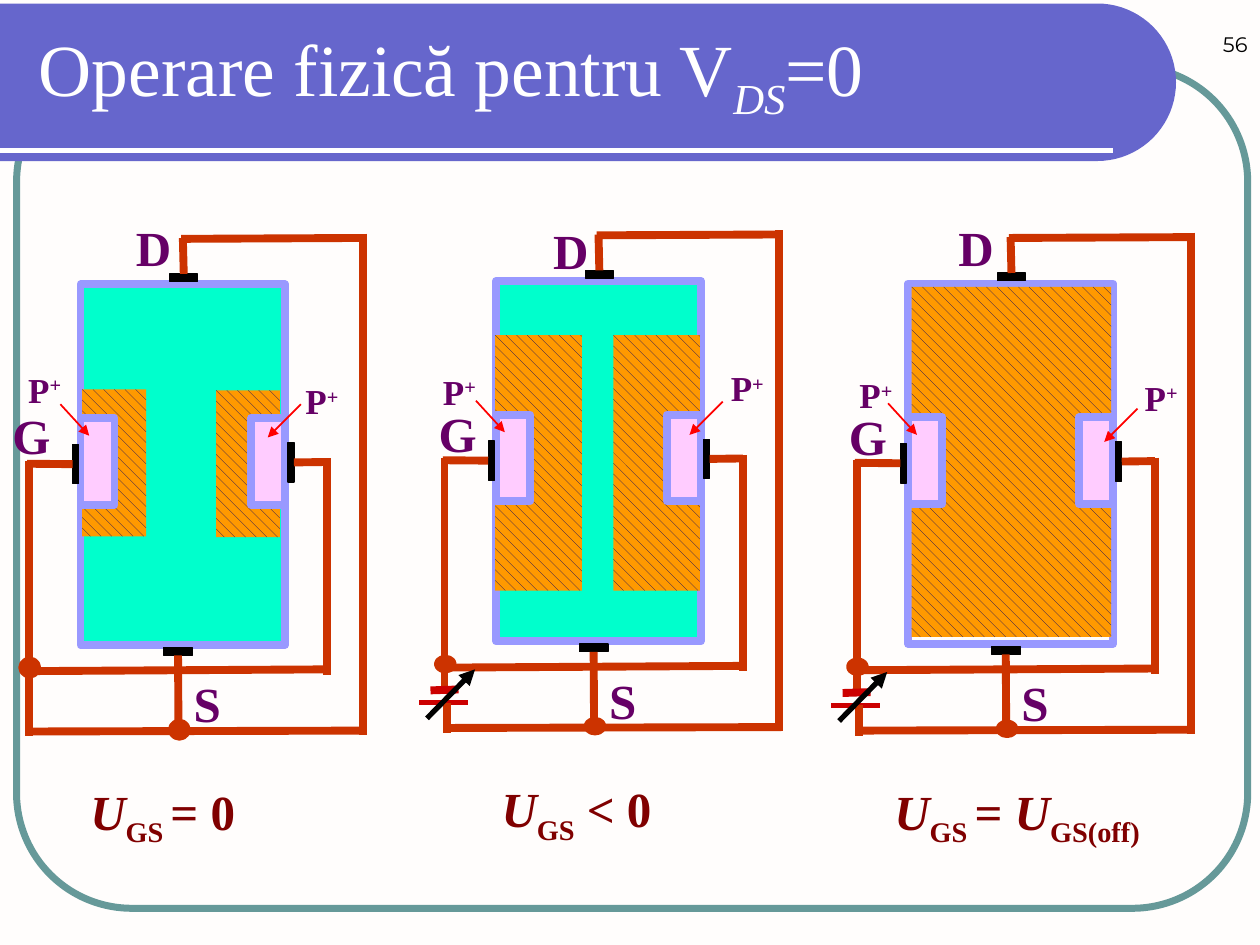
from dataclasses import dataclass
from math import cos, pi, sin

from lxml.etree import SubElement
from pptx import Presentation
from pptx.dml.color import RGBColor
from pptx.enum.dml import MSO_PATTERN
from pptx.enum.shapes import MSO_CONNECTOR, MSO_SHAPE
from pptx.enum.text import MSO_ANCHOR, PP_ALIGN
from pptx.oxml.ns import qn
from pptx.util import Pt

TOP, LEFT, BOTTOM, RIGHT = range(4)
SUB, SUPER = -25000, 30000


@dataclass(frozen=True)
class Theme:
    """Colours, fonts and type sizes of the slide."""
    paper: str = "FFFDFC"
    frame: str = "669999"
    band: str = "6666CC"
    white: str = "FFFFFF"
    black: str = "000000"
    caption: str = "800000"
    label: str = "660066"
    channel: str = "00FFCC"
    edge: str = "9999FF"
    gate: str = "FFCCFF"
    depletion: str = "FF9900"
    hatch: str = "000066"
    wire: str = "CC3300"
    battery: str = "CC0000"
    pointer: str = "FF0000"
    serif: str = "Times New Roman"
    sans: str = "Montserrat"
    title_size: int = 42
    label_size: int = 28
    small_size: int = 20
    number_size: int = 12


@dataclass(frozen=True)
class Transistor:
    """One bias state; positions are relative to the body's top left corner."""
    origin: tuple
    depletion: tuple
    drain_label: tuple
    gate_label: tuple
    left_p: tuple
    right_p: tuple
    pointer: tuple
    channel: str = None
    biased: bool = True
    dot_height: float = 6


THEME = Theme()

TRANSISTORS = (
    Transistor((46, 162.5), ((77.5, 60.5, 36.5, 84), (1, 60, 36.5, 84)),
               (24.5, -41.5), (-46, 65.5), (-37, 44.5), (121.5, 51),
               (126, 68.5), THEME.channel, False, 8),
    Transistor((283.5, 160.5), ((67, 31, 49.5, 146), (-0.5, 31, 49.5, 146)),
               (25.5, -38), (-40, 66.5), (-37.5, 47.5), (127, 45.5),
               (129.5, 69), THEME.channel),
    Transistor((519, 162), ((2, 2, 114, 200),),
               (21.5, -41), (-41, 67), (-35, 48), (128, 49.5),
               (131, 71.5)),
)

CAPTIONS = (
    (44.5, 443, 117.5, (("U", 0, True), ("GS ", SUB, False), ("= 0", 0, False))),
    (279.5, 441.5, 134.5, (("U", 0, True), ("GS", SUB, False), (" < 0", 0, False))),
    (504, 443, 180, (("U", 0, True), ("GS ", SUB, False), ("= ", 0, False),
                     ("U", 0, True), ("GS(off)", SUB, False))),
)


def rgb(color):
    """Turn a hex string into a colour."""
    return RGBColor.from_string(color)


def style(shape, fill=None, line=None, width=0.75):
    """Set fill and outline of a shape and remove its shadow."""
    shape.shadow.inherit = False
    if fill:
        shape.fill.solid()
        shape.fill.fore_color.rgb = rgb(fill)
    else:
        shape.fill.background()
    if line:
        shape.line.color.rgb = rgb(line)
        shape.line.width = Pt(width)
    else:
        shape.line.fill.background()
    return shape


def add_block(slide, box, fill=None, line=None, width=0.75, kind=MSO_SHAPE.RECTANGLE):
    """Add a preset shape at left, top, width, height."""
    shape = slide.shapes.add_shape(kind, *(Pt(length) for length in box))
    return style(shape, fill, line, width)


def add_line(slide, start, end, color=THEME.wire, width=4.5, arrow=False):
    """Add a straight line, with an arrowhead at its end if asked."""
    line = slide.shapes.add_connector(
        MSO_CONNECTOR.STRAIGHT, *(Pt(length) for length in (*start, *end)))
    line.line.color.rgb = rgb(color)
    line.line.width = Pt(width)
    if arrow:
        SubElement(line.line._get_or_add_ln(), qn("a:tailEnd"), type="triangle")
    SubElement(line._element.spPr, qn("a:effectLst"))
    return line


def write(frame, parts, size, color, font=THEME.serif, bold=False):
    """Fill a text frame with runs given as text, baseline shift and italic."""
    frame.word_wrap = True
    paragraph = frame.paragraphs[0]
    paragraph.alignment = PP_ALIGN.LEFT
    for text, baseline, italic in parts:
        run = paragraph.add_run()
        run.text = text
        run.font.name = font
        run.font.size = Pt(size)
        run.font.bold = bold
        run.font.italic = italic
        run.font.color.rgb = rgb(color)
        if baseline:
            run._r.get_or_add_rPr().set("baseline", str(baseline))
    return paragraph


def add_label(slide, box, parts, size=THEME.label_size, color=THEME.label):
    """Add a bold serif text box."""
    label = slide.shapes.add_textbox(*(Pt(length) for length in box))
    write(label.text_frame, parts, size, color, bold=True)


def add_backdrop(slide):
    """Draw the background, rounded frame and title band."""
    slide.background.fill.solid()
    slide.background.fill.fore_color.rgb = rgb(THEME.paper)
    frame = add_block(slide, (9.5, 38, 703.5, 481), None, THEME.frame, 4,
                      MSO_SHAPE.ROUNDED_RECTANGLE)
    frame.adjustments[0] = 0.137
    radius, center_x, center_y, steps = 45, 627, 47, 40
    angles = [pi * step / steps - pi / 2 for step in range(steps + 1)]
    arc = [(Pt(center_x + radius * cos(a)), Pt(center_y + radius * sin(a))) for a in angles]
    outline = slide.shapes.build_freeform(0, Pt(center_y - radius))
    outline.add_line_segments(arc + [(0, Pt(center_y + radius))], close=True)
    style(outline.convert_to_shape(), THEME.band)
    add_line(slide, (0, 86), (636, 86), THEME.white, 3)


def add_title(slide):
    """Place the title over the band and the number beside it."""
    title = slide.shapes.title
    title.left, title.top, title.width, title.height = Pt(15), Pt(8), Pt(631.5), Pt(67.5)
    title.text_frame.vertical_anchor = MSO_ANCHOR.MIDDLE
    write(title.text_frame,
          (("Operare fizică pentru V", 0, False), ("DS", SUB, True), ("=0", 0, False)),
          THEME.title_size, THEME.white)
    slide.shapes._spTree.append(title._element)
    number = slide.shapes.add_textbox(Pt(587), 0, Pt(133), Pt(36))
    number.text_frame.vertical_anchor = MSO_ANCHOR.BOTTOM
    paragraph = write(number.text_frame, (("56", 0, False),),
                      THEME.number_size, THEME.black, THEME.sans)
    paragraph.alignment = PP_ALIGN.RIGHT


def add_transistor(slide, device):
    """Draw a transistor with its regions, contacts, wiring and labels."""
    def at(x, y, *size):
        return (device.origin[0] + x, device.origin[1] + y, *size)

    add_block(slide, at(0, 0, 117, 206), device.channel, THEME.edge, 4.5)
    for region in device.depletion:
        hatched = add_block(slide, at(*region))
        hatched.fill.patterned()
        hatched.fill.pattern = MSO_PATTERN.DASHED_DOWNWARD_DIAGONAL
        hatched.fill.fore_color.rgb = rgb(THEME.hatch)
        hatched.fill.back_color.rgb = rgb(THEME.depletion)
    for gate_x in (0, 97.5):
        add_block(slide, at(gate_x, 76.5, 19.5, 49.5), THEME.gate, THEME.edge, 4.5)

    leads = (((51, -6, 16, 4.5), TOP, (58.5, -26.5)),
             ((47.5, 207.5, 16.5, 4.5), BOTTOM, (56, 255)),
             ((-4.5, 91.5, 3.5, 22.5), LEFT, (-30.5, 102.5)),
             ((118.5, 90.5, 3.5, 22.5), RIGHT, (141, 101.5)))
    for box, side, end in leads:
        contact = add_block(slide, at(*box), THEME.black, THEME.black)
        add_line(slide, at(*box[:2]), at(*end)).begin_connect(contact, side)

    gate_end = 233 if device.biased else 258
    wires = (((141, 99.5), (141, 223)), ((-29.5, 221), (143, 220)),
             ((-29.5, 101), (-29.5, gate_end)), ((-29.5, 255.5), (163, 255)),
             ((161.5, -29), (161.5, 257.5)), ((57.5, -26), (160.5, -26.5)))
    for start, end in wires:
        add_line(slide, at(*start), at(*end))
    if device.biased:
        add_line(slide, at(-37.5, 234), at(-21.5, 233.5), THEME.battery)
        add_line(slide, at(-44, 241), at(-16, 241), THEME.battery, 3)
        add_line(slide, at(-28, 241), at(-28, 258.5))
        add_line(slide, at(-39.5, 250), at(-12, 222), THEME.black, 3, True)
    for x, y in ((56.5, 254.5), (-29, 219)):
        dot = at(x - 4.25, y - device.dot_height / 2, 8.5, device.dot_height)
        add_block(slide, dot, THEME.wire, THEME.wire, 4.5, MSO_SHAPE.OVAL)

    for terminal, place in (("D", device.drain_label), ("S", (57.5, 219)),
                            ("G", device.gate_label)):
        add_label(slide, at(*place, 21, 41), ((terminal, 0, False),))
    for place in (device.left_p, device.right_p):
        add_label(slide, at(*place, 42, 31), (("P", 0, False), ("+", SUPER, False)),
                  THEME.small_size)
    pointer_x, pointer_y = device.pointer
    for start, end in (((-11.5, 68.5), (5, 86.5)),
                       ((pointer_x, pointer_y), (pointer_x - 19, pointer_y + 19))):
        add_line(slide, at(*start), at(*end), THEME.pointer, 1, True)


def main():
    """Build and save the slide."""
    deck = Presentation()
    deck.slide_width, deck.slide_height = Pt(720), Pt(540)
    slide = deck.slides.add_slide(deck.slide_layouts[5])
    add_backdrop(slide)
    add_title(slide)
    for device in TRANSISTORS:
        add_transistor(slide, device)
    for left, top, width, parts in CAPTIONS:
        add_label(slide, (left, top, width, 41), parts, color=THEME.caption)
    deck.save("out.pptx")


if __name__ == "__main__":
    main()
